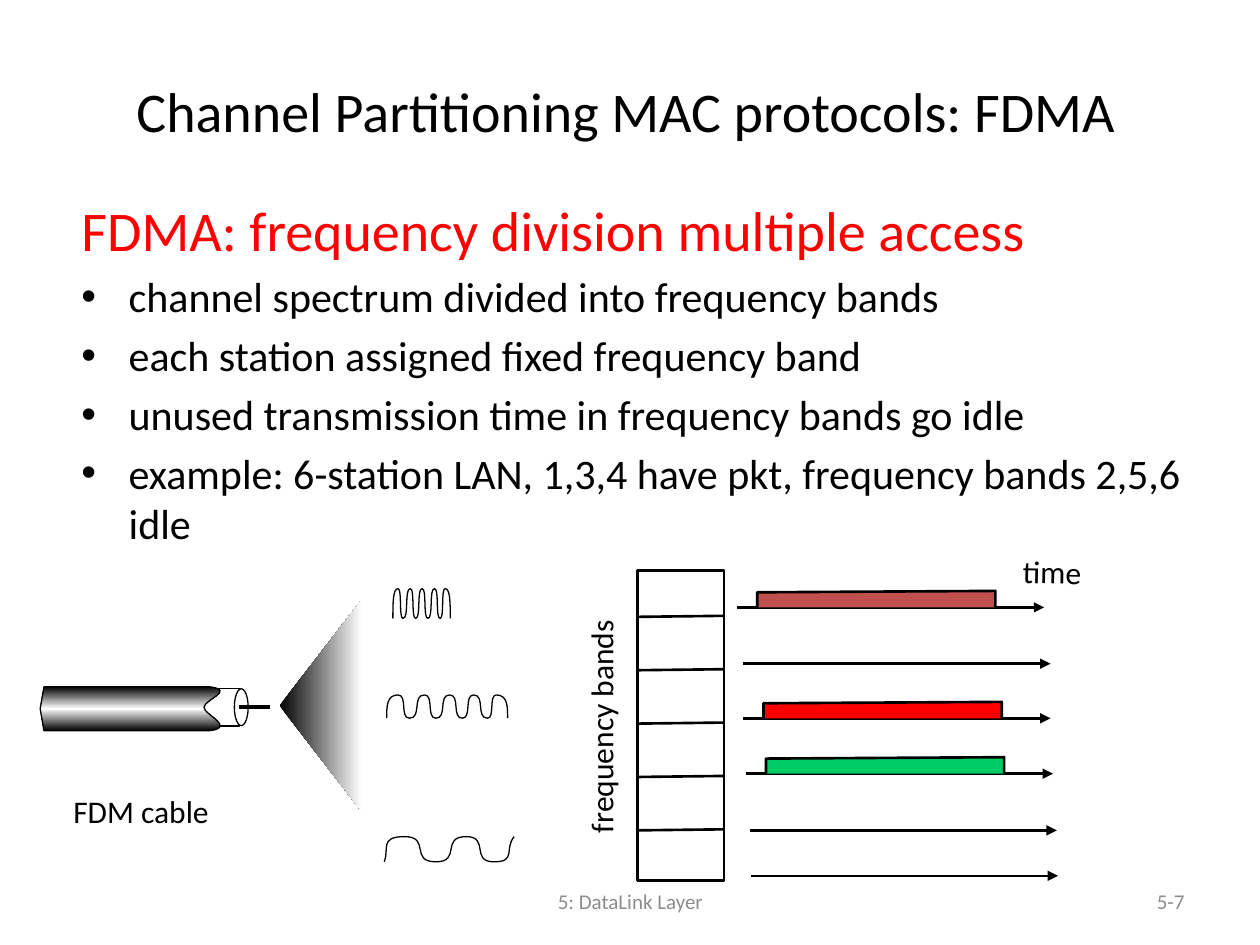
from lxml import etree
from pptx import Presentation
from pptx import util as u
from pptx.dml.color import RGBColor
from pptx.enum import shapes, text
from pptx.oxml.ns import qn

Pt = u.Pt
FONT = "Calibri"
COLORS = {"black": "000000", "white": "FFFFFF", "grey": "8C8C8C", "red": "FF0000",
          "brick": "C0504D", "green": "00CC66"}
LEFT, CENTER, RIGHT = text.PP_ALIGN.LEFT, text.PP_ALIGN.CENTER, text.PP_ALIGN.RIGHT


def rgb(name):
    return RGBColor.from_string(COLORS[name])


def add_run(para, words, size, color):
    span = para.add_run()
    span.text = words
    span.font.name, span.font.size = FONT, Pt(size)
    span.font.color.rgb = rgb(color)


def add_text(page, box, words="", size=18, color="black", align=LEFT, middle=False,
             wrap=True, rotation=0):
    shape = page.shapes.add_textbox(*map(Pt, box))
    shape.rotation = rotation
    frame = shape.text_frame
    frame.word_wrap = wrap
    frame.vertical_anchor = text.MSO_ANCHOR.MIDDLE if middle else text.MSO_ANCHOR.TOP
    if words:
        frame.paragraphs[0].alignment = align
        add_run(frame.paragraphs[0], words, size, color)
    return frame


def paint(shape, fill=None, line=None):
    shape.shadow.inherit = False
    if fill:
        shape.fill.solid()
        shape.fill.fore_color.rgb = rgb(fill)
    else:
        shape.fill.background()
    if line:
        shape.line.color.rgb = rgb("black")
        shape.line.width = Pt(line)
    else:
        shape.line.fill.background()
    return shape


def add_preset(page, kind, box, line):
    return paint(page.shapes.add_shape(kind, *map(Pt, box)), "white", line)


def add_outline(page, start, steps, close=True, fill=None, line=None):
    """Each step is a list of points: one for a straight line, three for a curve."""
    # Local units are hundredths of a point
    grid = [(round(x * 100), round(y * 100)) for step in steps for x, y in step]
    builder = page.shapes.build_freeform(round(start[0] * 100), round(start[1] * 100),
                                         scale=Pt(1) / 100)
    builder.add_line_segments(grid, close=close)
    shape = builder.convert_to_shape()
    # Join the three points of each curve into one segment
    segments = iter(list(shape._element.iter(qn("a:lnTo"))))
    for step in steps:
        parts = [next(segments) for _ in step]
        if len(parts) == 3:
            bend = etree.Element(qn("a:cubicBezTo"))
            parts[0].addprevious(bend)
            for part in parts:
                bend.append(part[0])
                part.getparent().remove(part)
    return paint(shape, fill, line)


def add_gradient(shape, names, angle):
    properties = shape._element.spPr
    properties.remove(properties.find(qn("a:noFill")))
    gradient = etree.Element(qn("a:gradFill"), rotWithShape="1")
    stops = etree.SubElement(gradient, qn("a:gsLst"))
    for i, name in enumerate(names):
        stop = etree.SubElement(stops, qn("a:gs"), pos=str(100000 * i // (len(names) - 1)))
        etree.SubElement(stop, qn("a:srgbClr"), val=COLORS[name])
    etree.SubElement(gradient, qn("a:lin"), ang=str(angle * 60000), scaled="0")
    properties.find(qn("a:custGeom")).addnext(gradient)


def add_line(page, x1, y1, x2, y2, width=1.5, arrow=False):
    line = page.shapes.add_connector(shapes.MSO_CONNECTOR.STRAIGHT,
                                     *map(Pt, (x1, y1, x2, y2)))
    line.line.color.rgb = rgb("black")
    line.line.width = Pt(width)
    properties = line._element.spPr
    if arrow:
        etree.SubElement(properties.find(qn("a:ln")), qn("a:tailEnd"), type="triangle")
    etree.SubElement(properties, qn("a:effectLst"))


def add_body(page, box):
    frame = add_text(page, box)
    lines = ["FDMA: frequency division multiple access",
             "channel spectrum divided into frequency bands",
             "each station assigned fixed frequency band",
             "unused transmission time in frequency bands go idle",
             "example: 6-station LAN, 1,3,4 have pkt, frequency bands 2,5,6 idle"]
    for i, words in enumerate(lines):
        para = frame.add_paragraph() if i else frame.paragraphs[0]
        size, color = (24, "black") if i else (32, "red")
        para.space_before = Pt(size * 0.2)
        properties = para._p.get_or_add_pPr()
        properties.set("marL", str(Pt(27)))
        properties.set("indent", str(-Pt(27)))
        if i:
            etree.SubElement(properties, qn("a:buFont"), typeface="Arial")
            etree.SubElement(properties, qn("a:buChar"), char="•")
        add_run(para, words, size, color)


def add_band_stack(page, left, top, width, height):
    add_preset(page, shapes.MSO_SHAPE.RECTANGLE, (left, top, width, height), 1.5)
    for i in range(5):
        y = top + 26.2 + 30.5 * i
        add_line(page, left, y + 0.3, left + width, y - 0.3)
    add_text(page, (left - 97.2, top + 66.4, 152.6, 28.8), "frequency bands",
             wrap=False, rotation=270)


def add_timelines(page, left, top):
    """One time axis per band; a bar marks a band in use."""
    bands = [(0, 0, "brick"), (3.6, 32.2, None), (3.6, 63.4, "red"),
             (5, 95, "green"), (7.2, 127.4, None), (7.9, 153.4, None)]
    for dx, dy, color in bands:
        x, y = left + dx, top + dy
        add_line(page, x, y, x + 175.5, y, arrow=True)
        if color:
            start, end = x + 11.5, x + 147.6
            add_outline(page, (start, y), [[(start, y - 8.6)], [(end, y - 9.4)], [(end, y)]],
                        close=False, fill=color, line=1.5)
    add_text(page, (left + 156.2, top - 34.8, 51.8, 28.8), "time", wrap=False, rotation=1.1)


def add_cable(page, left, top, width, height):
    right, bottom, middle = left + width, top + height, top + height / 2
    # Inner insulation
    add_preset(page, shapes.MSO_SHAPE.RECTANGLE, (left + 92.9, top + 1, 20.9, 21.6), 0.75)
    # Jacket with its cut-back end
    notch = right - 2.9, top + 11.8
    jacket = [[(left, middle)], [(left + 2.2, bottom)], [(right, bottom)],
              [(right + 15.8, bottom - 2), (notch[0], notch[1] + 4.2), notch],
              [(notch[0], notch[1] - 4.4), (right + 15.8, top + 2), (right, top)]]
    shape = add_outline(page, (left + 2.2, top), jacket, line=0.75)
    add_gradient(shape, ["black", "white", "black"], 90)
    # Cut face and core wire
    add_preset(page, shapes.MSO_SHAPE.OVAL, (right + 14.4, top + 1.2, 7.9, 21.1), 0.75)
    add_line(page, right + 17.3, top + 11.7, right + 34.6, top + 11.7, width=2.25)
    add_text(page, (left + 11.8, top + 56.6, 103.7, 28.8), "FDM cable", wrap=False)


def add_cone(page, left, top, width, height):
    right = left + width
    shape = add_outline(page, (right, top),
                        [[(left, top + height / 2)], [(right, top + height)]])
    add_gradient(shape, ["black", "white"], 0)


def add_wave(page, left, top, height, turns, lean=0):
    """A wave that starts low and swings between top and bottom at each turn."""
    nodes = [(left + x, top + height * (i % 2 == 0)) for i, x in enumerate(turns)]
    steps = []
    for i, ((x1, y1), (x2, y2)) in enumerate(zip(nodes, nodes[1:])):
        reach, half = 0.85 * (x2 - x1), (y1 + y2) / 2
        first, second = (x1 + reach, y1), (x2 - reach, y2)
        if i == 0:
            first, second = (x1 + lean, half), (x1 - lean, y2)
        elif i == len(nodes) - 2:
            first, second = (x2 + lean / 2, y1), (x2 - 2 * lean, half)
        steps.append([first, second, (x2, y2)])
    add_outline(page, nodes[0], steps, close=False, line=0.75)


def main():
    deck = Presentation()
    deck.slide_width, deck.slide_height = Pt(720), Pt(540)
    page = deck.slides.add_slide(deck.slide_layouts[6])

    # Footer, title and body
    add_text(page, (246.2, 500.4, 228.2, 28.8), "5: DataLink Layer", 12, "grey", CENTER, True)
    add_text(page, (516.2, 500.4, 167.8, 28.8), "5-7", 12, "grey", RIGHT, True)
    add_text(page, (18, 18, 679.7, 90), "Channel Partitioning MAC protocols: FDMA", 32,
             align=CENTER, middle=True)
    add_body(page, (39.4, 108, 647.3, 365.8))

    # Frequency bands over time
    add_band_stack(page, 364.2, 326, 49.6, 177.1)
    add_timelines(page, 421.2, 347.1)

    # Cable, and the signals it carries
    add_cone(page, 159.8, 342.7, 46.8, 121)
    add_cable(page, 23, 392.4, 96.5, 25.2)
    add_wave(page, 224.5, 336.4, 17, [0, 2.9, 5.8, 10, 13, 16.7, 20, 23.8, 27, 29.9, 32.8])
    add_wave(page, 221, 397.1, 13.3, [0, 6.5, 13, 21.6, 28.1, 36, 43.2, 49.7, 57.6, 62.6, 69.1])
    add_wave(page, 219.6, 478.1, 14.4, [0, 11.5, 29.5, 46.8, 62.6, 74.2], lean=2.9)

    deck.save("out.pptx")


if __name__ == "__main__":
    main()
